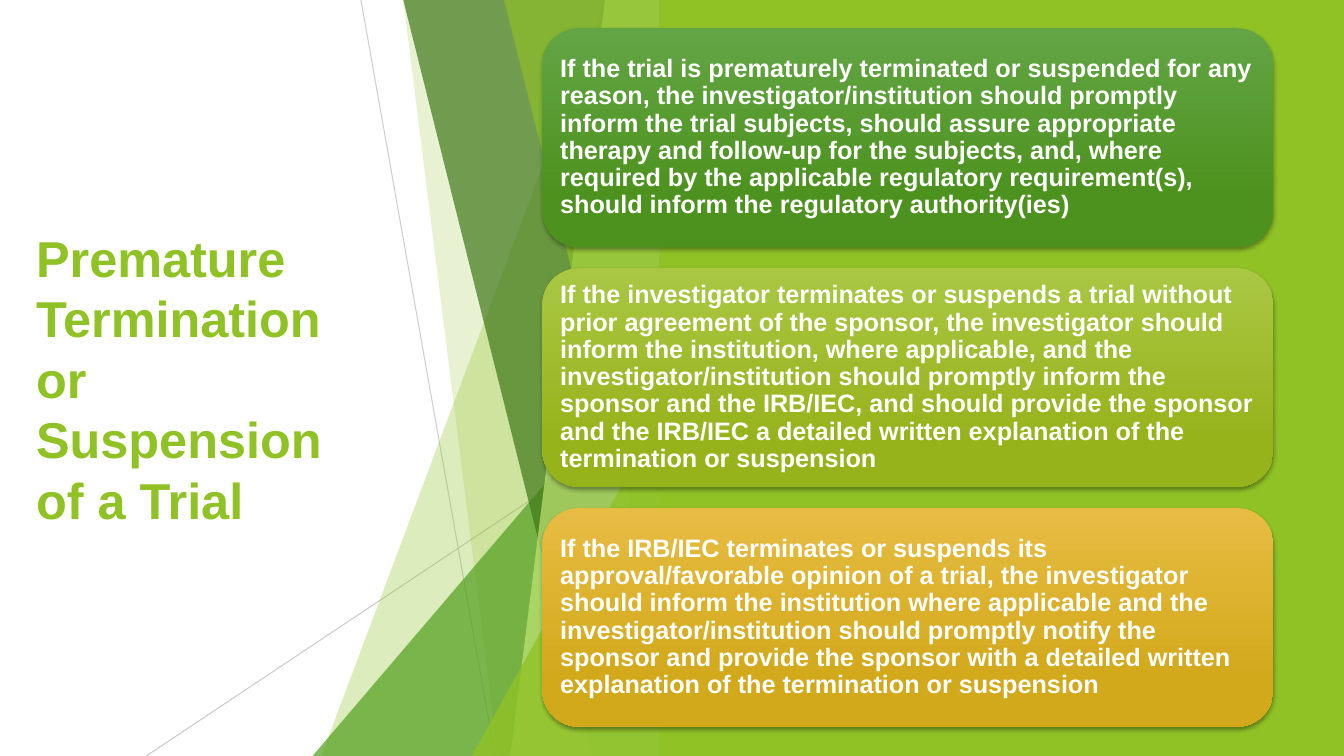
from lxml.etree import SubElement
from pptx import Presentation
from pptx.dml.color import RGBColor
from pptx.enum.shapes import MSO_CONNECTOR, MSO_SHAPE
from pptx.enum.text import MSO_ANCHOR, PP_ALIGN
from pptx.oxml.ns import qn
from pptx.util import Inches, Pt


def rgb(value):
    return RGBColor.from_string(value)


def paint(sp, color, alpha=100):
    sp.shadow.inherit = False
    sp.line.fill.background()
    sp.fill.solid()
    sp.fill.fore_color.rgb = rgb(color)
    if alpha < 100:
        clr = sp._element.spPr.find(qn("a:solidFill"))[0]
        SubElement(clr, qn("a:alpha"), val=str(alpha * 1000))


prs = Presentation()
prs.slide_width, prs.slide_height = Inches(13.33), Inches(7.5)
s = prs.slides.add_slide(prs.slide_layouts[6])

tb = s.shapes.add_textbox(Inches(0.26), Inches(1.51), Inches(3.28), Inches(4.48))
tf = tb.text_frame
tf.word_wrap = True
tf.vertical_anchor = MSO_ANCHOR.MIDDLE
r = tf.paragraphs[0].add_run()
r.text = "Premature Termination or Suspension of a Trial"
r.font.name, r.font.size, r.font.bold = "Arial", Pt(36), True
r.font.color.rgb = rgb("90C226")

for x1, y1, x2, y2, alpha in [(3.58, 0, 4.91, 7.5, 75), (6.66, 4.03, 1.45, 7.5, 80)]:
    cn = s.shapes.add_connector(MSO_CONNECTOR.STRAIGHT, Inches(x1), Inches(y1), Inches(x2), Inches(y2))
    cn.line.width = Pt(0.75)
    cn.line.color.rgb = rgb("BFBFBF")
    spPr = cn._element.spPr
    clr = spPr.find(qn("a:ln")).find(qn("a:solidFill"))[0]
    SubElement(clr, qn("a:alpha"), val=str(alpha * 1000))
    SubElement(spPr, qn("a:effectLst"))

right = 6.66
facets = [
    ("band", 5.61, 3.37, "90C226", 30),
    ("band", 3.84, 5.16, "90C226", 20),
    ("triangle", 3.33, 3.1, "54A021", 72),
    ("band", 3.54, 6.24, "3F7819", 70),
    ("band", 6.37, 5.25, "C0E474", 70),
    ("band", 5.3, 6.51, "90C226", 65),
    ("triangle", 3.93, 4.68, "90C226", 80),
]
for kind, start, foot, color, alpha in facets:
    if kind == "band":
        fb = s.shapes.build_freeform(start, -0.01, scale=Inches(1))
        fb.add_line_segments([(right, -0.01), (right, 7.5), (foot, 7.5)], close=True)
        sp = fb.convert_to_shape()
    else:
        sp = s.shapes.add_shape(MSO_SHAPE.ISOSCELES_TRIANGLE, Inches(foot), Inches(start),
                                Inches(right - foot), Inches(7.5 - start))
        sp.adjustments[0] = 1
    paint(sp, color, alpha)

panel = s.shapes.add_shape(MSO_SHAPE.RECTANGLE, Inches(6.54), 0, Inches(6.79), Inches(7.5))
paint(panel, "90C226")

cards = [
    ("63A545", "4D921E",
     "If the trial is prematurely terminated or suspended for any reason, the investigator/institution "
     "should promptly inform the trial subjects, should assure appropriate therapy and follow-up for the "
     "subjects, and, where required by the applicable regulatory requirement(s), should inform the "
     "regulatory authority(ies)"),
    ("AAC744", "97B31C",
     "If the investigator terminates or suspends a trial without prior agreement of the sponsor, the "
     "investigator should inform the institution, where applicable, and the investigator/institution "
     "should promptly inform the sponsor and the IRB/IEC, and should provide the sponsor and the IRB/IEC "
     "a detailed written explanation of the termination or suspension"),
    ("E7BC43", "D2A91B",
     "If the IRB/IEC terminates or suspends its approval/favorable opinion of a trial, the investigator "
     "should inform the institution where applicable and the investigator/institution should promptly "
     "notify the sponsor and provide the sponsor with a detailed written explanation of the termination "
     "or suspension"),
]
for i, (top_color, bottom_color, text) in enumerate(cards):
    sp = s.shapes.add_shape(MSO_SHAPE.ROUNDED_RECTANGLE, Inches(5.38), Inches(0.28 + 2.38 * i),
                            Inches(7.25), Inches(2.17))
    sp.line.fill.background()
    sp.fill.gradient()
    sp.fill.gradient_angle = 270
    for stop, position, color in zip(sp.fill.gradient_stops, (0, 0.78), (top_color, bottom_color)):
        stop.position = position
        stop.color.rgb = rgb(color)
    sp.shadow.inherit = False
    effects = sp._element.spPr.find(qn("a:effectLst"))
    shadow = SubElement(effects, qn("a:outerShdw"), blurRad=str(Pt(3)), dist=str(Pt(2)),
                        dir="5400000", rotWithShape="0")
    clr = SubElement(shadow, qn("a:srgbClr"), val="000000")
    SubElement(clr, qn("a:alpha"), val="35000")
    tf = sp.text_frame
    tf.word_wrap = True
    tf.vertical_anchor = MSO_ANCHOR.MIDDLE
    tf.margin_left = tf.margin_right = tf.margin_top = tf.margin_bottom = Inches(0.07)
    p = tf.paragraphs[0]
    p.alignment = PP_ALIGN.LEFT
    p.line_spacing = 0.9
    r = p.add_run()
    r.text = text
    r.font.name, r.font.size, r.font.bold = "Arial", Pt(18), True
    r.font.color.rgb = rgb("FFFFFF")

prs.save("out.pptx")
